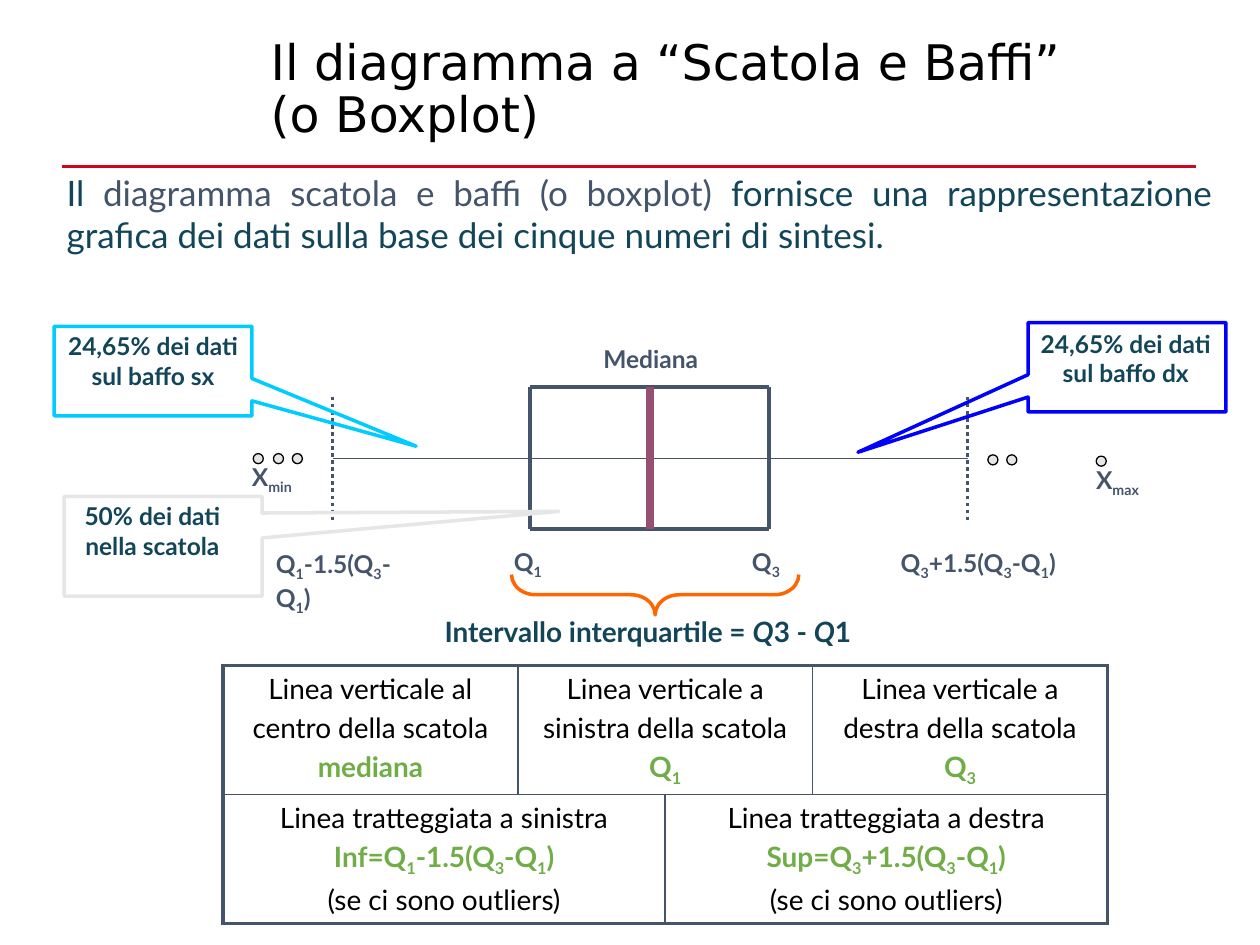
from dataclasses import dataclass

from lxml import etree
from pptx import Presentation
from pptx import util as u
from pptx.dml.color import RGBColor
from pptx.enum import dml, shapes, text
from pptx.oxml import ns


@dataclass(frozen=True)
class Theme:
    title_font: str = "DejaVu Sans"
    body_font: str = "Lato"
    title_size: int = 28
    lead_size: int = 20
    table_size: int = 16
    label_size: int = 14
    black: str = "000000"
    slate: str = "44546A"
    teal: str = "114557"
    green: str = "70AD47"
    red: str = "CD071E"
    plum: str = "954F72"
    orange: str = "FF6600"
    grey: str = "E7E6E6"
    blue: str = "0000FF"
    cyan: str = "00CCFF"


THEME = Theme()
LEFT, CENTER, JUSTIFY = text.PP_ALIGN.LEFT, text.PP_ALIGN.CENTER, text.PP_ALIGN.JUSTIFY


def rgb(color):
    return RGBColor.from_string(color)


def lower(span):
    span._r.get_or_add_rPr().set("baseline", "-25000")


def slant(span):
    span.font.italic = True


def tint_slate(span):
    span.font.color.rgb = rgb(THEME.slate)


class Painter:
    def __init__(self, page, theme):
        self.page = page
        self.theme = theme

    def fill_para(self, para, words, size, color, bold=False, align=LEFT, font=None, mark=lower):
        para.alignment = align
        para.font.name = font or self.theme.body_font
        para.font.size = u.Pt(size)
        para.font.bold = bold
        para.font.color.rgb = rgb(color)
        if "_" not in words:
            para.text = words
            return
        for index, part in enumerate(words.split("_")):
            if part:
                span = para.add_run()
                span.text = part
                if index % 2:
                    mark(span)

    def label(self, place, words, size, color, **style):
        box = self.page.shapes.add_textbox(*map(u.Inches, place))
        box.text_frame.word_wrap = True
        para = box.text_frame.paragraphs[0]
        self.fill_para(para, words, size, color, **style)
        return para

    def line(self, start, end, color, width, dash=None):
        rule = self.page.shapes.add_connector(
            shapes.MSO_CONNECTOR.STRAIGHT, *map(u.Inches, start + end))
        rule.line.color.rgb = rgb(color)
        rule.line.width = u.Pt(width)
        if dash:
            rule.line.dash_style = dash
        etree.SubElement(rule._element.spPr, ns.qn("a:effectLst"))

    def shape(self, kind, place, color, width, fill=None, adjust=(), turn=0):
        item = self.page.shapes.add_shape(kind, *map(u.Inches, place))
        item.shadow.inherit = False
        item.rotation = turn
        for index, value in enumerate(adjust):
            item.adjustments[index] = value
        if fill:
            item.fill.solid()
            item.fill.fore_color.rgb = rgb(fill)
        else:
            item.fill.background()
        item.line.color.rgb = rgb(color)
        item.line.width = u.Pt(width)

    def border(self, cell, edges):
        props = cell._tc.get_or_add_tcPr()
        for side, width in edges.items():
            edge = etree.SubElement(props, ns.qn(f"a:ln{side}"), w=str(u.Pt(width)))
            fill = etree.SubElement(edge, ns.qn("a:solidFill"))
            etree.SubElement(fill, ns.qn("a:srgbClr"), val=self.theme.slate)

    def table(self, place, columns, heights, entries):
        grid = self.page.shapes.add_table(
            len(heights), len(columns), *map(u.Inches, place)).table
        grid.first_row = grid.horz_banding = False
        for column, width in zip(grid.columns, columns):
            column.width = u.Inches(width)
        for row, height in zip(grid.rows, heights):
            row.height = u.Inches(height)
        last_row, last_column = len(heights) - 1, len(columns) - 1
        for row, first, final, lines, key in entries:
            cell = grid.cell(row, first)
            if final > first:
                cell.merge(grid.cell(row, final))
            outer = {"L": first == 0, "R": final == last_column,
                     "T": row == 0, "B": row == last_row}
            self.border(cell, {side: 2.25 if out else 1 for side, out in outer.items()})
            cell.fill.background()
            for index, words in enumerate(lines):
                frame = cell.text_frame
                para = frame.add_paragraph() if index else frame.paragraphs[0]
                color = self.theme.green if index == key else self.theme.black
                self.fill_para(para, words, self.theme.table_size, color,
                               bold=index == key, align=CENTER)
                if index:
                    para.space_before = u.Pt(3.2)


def draw_boxplot(painter):
    t = painter.theme
    low, q1, median, q3, high = 2.64, 4.21, 5.16, 6.1, 7.68
    top, middle, bottom = 3.07, 3.64, 4.2
    for y, width in ((top, 2.25), (middle, 1), (bottom, 2.25)):
        painter.line((q1, y), (q3, y), t.slate, width)
    for x, color, width in ((q1, t.slate, 2.25), (median, t.plum, 4.5), (q3, t.slate, 2.25)):
        painter.line((x, top), (x, bottom), color, width)
    for inner, fence in ((q3, high), (q1, low)):
        painter.line((inner, middle), (fence, middle), t.slate, 0.75)
        painter.line((fence, 3.15), (fence, 4.13), t.slate, 2, dml.MSO_LINE.ROUND_DOT)


def main():
    deck = Presentation()
    deck.slide_width, deck.slide_height = u.Inches(10), u.Inches(7.5)
    t = THEME
    painter = Painter(deck.slides.add_slide(deck.slide_layouts[6]), t)

    painter.line((0.49, 1.32), (9.49, 1.32), t.red, 2)
    title = painter.label((2.05, 0.25, 9, 1.04), "Il diagramma a “Scatola e Baffi”\v(o Boxplot)",
                          t.title_size, t.black, font=t.title_font)
    title.line_spacing = 0.9
    painter.table(
        (1.77, 5.28, 7.02, 2), (2.34, 1.17, 1.17, 2.34), (0.99, 1.01),
        [(0, 0, 0, ("Linea verticale al", "centro della scatola", "mediana"), 2),
         (0, 1, 2, ("Linea verticale a", "sinistra della scatola", "Q_1_"), 2),
         (0, 3, 3, ("Linea verticale a", "destra della scatola", "Q_3_"), 2),
         (1, 0, 1, ("Linea tratteggiata a sinistra", "Inf=Q_1_-1.5(Q_3_-Q_1_)",
                    "(se ci sono outliers)"), 1),
         (1, 2, 3, ("Linea tratteggiata a destra", "Sup=Q_3_+1.5(Q_3_-Q_1_)",
                    "(se ci sono outliers)"), 1)])
    painter.label((0.43, 1.31, 9.29, 0.77),
                  "Il _diagramma scatola e baffi (o boxplot)_ fornisce una rappresentazione "
                  "grafica dei dati sulla base dei cinque numeri di sintesi.",
                  t.lead_size, t.teal, align=JUSTIFY, mark=tint_slate)

    draw_boxplot(painter)
    painter.label((3.43, 4.83, 4.1, 0.37), "Intervallo interquartile = _Q_3 - _Q_1",
                  t.table_size, t.teal, bold=True, mark=slant)
    painter.shape(shapes.MSO_SHAPE.LEFT_BRACE, (5.04, 3.58, 0.32, 2.28), t.orange, 2,
                  adjust=(0.6, 0.5), turn=270)

    callouts = (
        ((0.51, 3.94, 1.57, 0.79), (2, -0.35), t.grey,
         (0.5, 3.93, 1.42, 0.57), "50% dei dati nella scatola"),
        ((8.16, 2.56, 1.57, 0.71), (-1.36, 0.95), t.blue,
         (8.11, 2.56, 1.65, 0.57), "24,65% dei dati sul baffo dx"),
        ((0.43, 2.59, 1.57, 0.71), (1.33, 0.84), t.cyan,
         (0.39, 2.58, 1.65, 0.57), "24,65% dei dati sul baffo sx"))
    for place, tip, color, text_place, words in callouts:
        painter.shape(shapes.MSO_SHAPE.RECTANGULAR_CALLOUT, place, color, 2, adjust=tip)
        painter.label(text_place, words, t.label_size, t.teal, bold=True, align=CENTER)

    for x, y in ((2.32, 3.6), (2.17, 3.6), (2.01, 3.6), (8.7, 3.62), (7.99, 3.61), (7.84, 3.61)):
        painter.shape(shapes.MSO_SHAPE.OVAL, (x, y, 0.08, 0.08), t.black, 0.75, fill=t.grey)

    for x, y, width, words in (
            (3.98, 4.29, 0.94, "Q_1_"), (4.69, 2.68, 1.57, "Mediana"),
            (5.87, 4.29, 0.87, "Q_3_"), (2.09, 4.31, 1.38, "Q_1_-1.5(Q_3_-Q_1_)"),
            (7.05, 4.3, 1.45, "Q_3_+1.5(Q_3_-Q_1_)"),
            (1.9, 3.62, 0.71, "X_min_"), (8.6, 3.64, 0.71, "X_max_")):
        painter.label((x, y, width, 0.33), words, t.label_size, t.slate, bold=True)

    deck.save("out.pptx")


if __name__ == "__main__":
    main()
